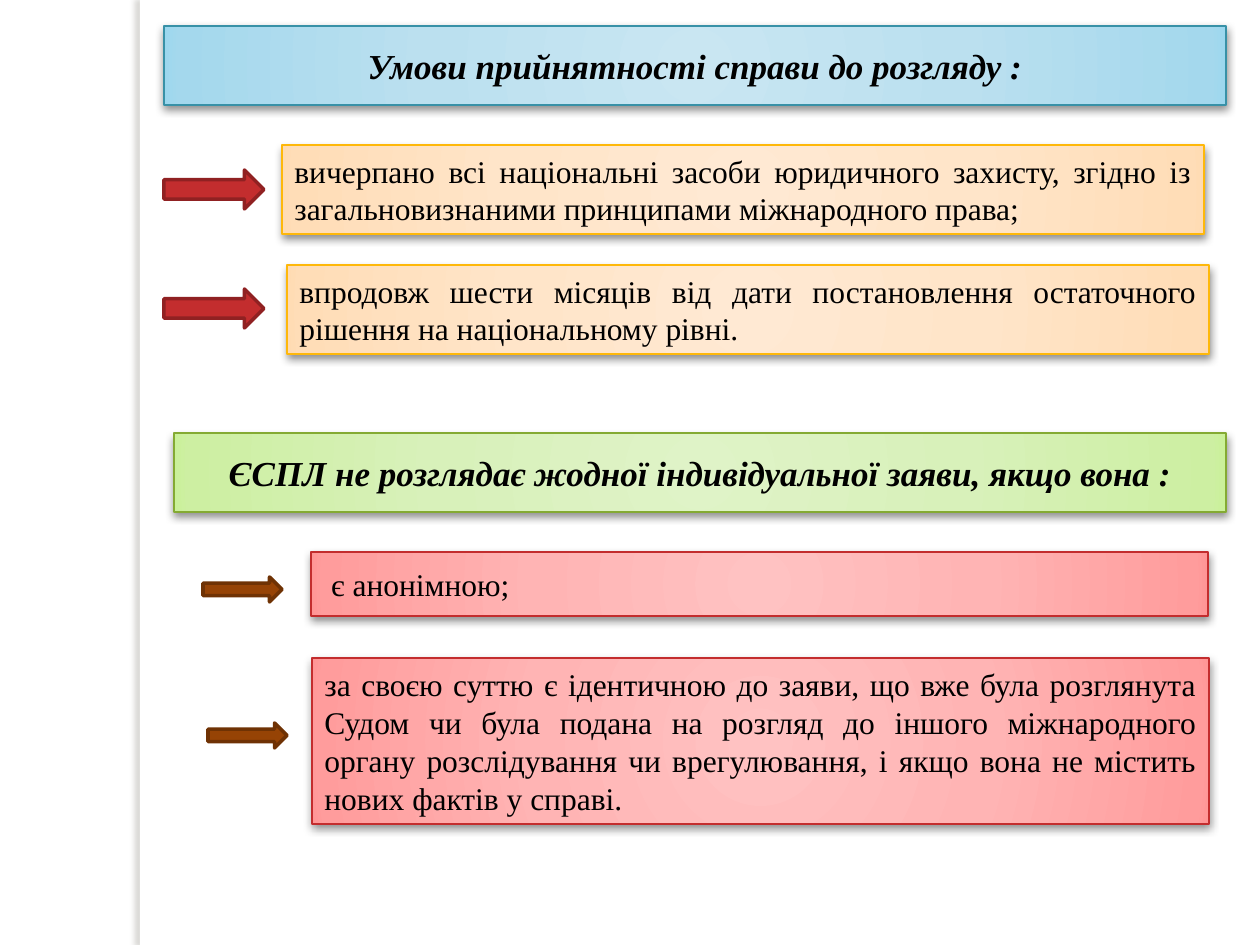
import pptx
import pptx.util
import pptx.dml.color
import pptx.enum.shapes
import pptx.enum.text
import pptx.oxml
import pptx.oxml.ns
from collections import namedtuple

RGB = pptx.dml.color.RGBColor
SHAPES = pptx.enum.shapes.MSO_SHAPE
ALIGN = pptx.enum.text.PP_ALIGN
PX = 914400 / 126
FONT = "Times New Roman"

BLACK = RGB(0, 0, 0)
WHITE = RGB(0xFF, 0xFF, 0xFF)
STRIP_SHADE = RGB(0x73, 0x6F, 0x63)

Box = namedtuple("Box", "left top width height")
Panel = namedtuple("Panel", "stops line")
ArrowStyle = namedtuple("ArrowStyle", "fill line")
Row = namedtuple("Row", "box arrow text")

STOP_POSITIONS = (0, 50, 97, 100)
BLUE = Panel((RGB(0xC9, 0xE6, 0xF2), RGB(0xBB, 0xE0, 0xEF),
              RGB(0xA4, 0xD8, 0xED), RGB(0x9B, 0xD7, 0xEE)), RGB(0x38, 0x91, 0xA7))
ORANGE = Panel((RGB(0xFF, 0xE9, 0xD3), RGB(0xFF, 0xE5, 0xC9),
                RGB(0xFF, 0xDD, 0xB7), RGB(0xFF, 0xDB, 0xB2)), RGB(0xFE, 0xB8, 0x0A))
GREEN = Panel((RGB(0xDF, 0xF3, 0xC7), RGB(0xD8, 0xF1, 0xBA),
               RGB(0xCD, 0xEF, 0xA2), RGB(0xCA, 0xF1, 0x99)), RGB(0x84, 0xAA, 0x33))
RED = Panel((RGB(0xFF, 0xC2, 0xC2), RGB(0xFF, 0xB4, 0xB4),
             RGB(0xFF, 0x9C, 0x9C), RGB(0xFF, 0x95, 0x95)), RGB(0xC3, 0x2D, 0x2E))
RED_ARROW = ArrowStyle(RGB(0xC3, 0x2D, 0x2E), RGB(0x90, 0x21, 0x22))
BROWN_ARROW = ArrowStyle(RGB(0x96, 0x43, 0x05), RGB(0x6F, 0x32, 0x04))

# Row and arrow boxes are relative to the section they belong to.
ADMISSIBLE_ROWS = (
    Row(Box(118, 119, 922, 89), Box(0, 144, 100, 39),
        "вичерпано всі національні засоби юридичного захисту, згідно із "
        "загальновизнаними принципами міжнародного права;"),
    Row(Box(123, 239, 922, 89), Box(0, 263, 100, 39),
        "впродовж шести місяців від дати постановлення остаточного рішення "
        "на національному рівні."),
)
REJECTED_ROWS = (
    Row(Box(137, 119, 897, 64), Box(29, 144, 79, 25), " є анонімною;"),
    Row(Box(138, 225, 897, 166), Box(34, 290, 79, 25),
        "за своєю суттю є ідентичною до заяви, що вже була розглянута Судом "
        "чи була подана на розгляд до іншого міжнародного органу розслідування "
        "чи врегулювання, і якщо вона не містить нових фактів у справі."),
)


def px(length):
    return pptx.util.Emu(round(length * PX))


def inside(outer, box):
    """Turn a box relative to outer into slide coordinates."""
    return box._replace(left=outer.left + box.left, top=outer.top + box.top)


def add_shape(page, kind, box):
    shape = page.shapes.add_shape(kind, *map(px, box))
    shape.shadow.inherit = False
    return shape


def add_shadow(shape, color, alpha, blur, distance, angle):
    shape.shadow.inherit = False
    effects = shape._element.spPr.find(pptx.oxml.ns.qn("a:effectLst"))
    effects.append(pptx.oxml.parse_xml(
        f'<a:outerShdw {pptx.oxml.ns.nsdecls("a")} blurRad="{pptx.util.Pt(blur)}" '
        f'dist="{pptx.util.Pt(distance)}" dir="{angle * 60000}" rotWithShape="0">'
        f'<a:srgbClr val="{color}"><a:alpha val="{alpha * 1000}"/></a:srgbClr>'
        '</a:outerShdw>'))


def fill_radial(shape, colors):
    shape.fill.gradient()
    old = shape._element.spPr.find(pptx.oxml.ns.qn("a:gradFill"))
    stops = "".join(
        f'<a:gs pos="{position * 1000}"><a:srgbClr val="{color}"/></a:gs>'
        for position, color in zip(STOP_POSITIONS, colors))
    old.getparent().replace(old, pptx.oxml.parse_xml(
        f'<a:gradFill {pptx.oxml.ns.nsdecls("a")} rotWithShape="1">'
        f'<a:gsLst>{stops}</a:gsLst><a:path path="circle">'
        '<a:fillToRect l="50000" t="50000" r="50000" b="50000"/></a:path></a:gradFill>'))


def format_panel(shape, panel, text, size, align, emphasis=False):
    fill_radial(shape, panel.stops)
    shape.line.color.rgb = panel.line
    shape.line.width = pptx.util.Pt(0.75)
    add_shadow(shape, BLACK, 43, 5, 2, 90)
    frame = shape.text_frame
    frame.word_wrap = True
    frame.auto_size = pptx.enum.text.MSO_AUTO_SIZE.NONE
    frame.vertical_anchor = pptx.enum.text.MSO_ANCHOR.MIDDLE
    para = frame.paragraphs[0]
    para.alignment = align
    span = para.add_run()
    span.text = text
    span.font.name = FONT
    span.font.size = pptx.util.Pt(size)
    span.font.bold = span.font.italic = emphasis
    span.font.color.rgb = BLACK


def add_arrow(page, box, style):
    arrow = add_shape(page, SHAPES.RIGHT_ARROW, box)
    arrow.fill.solid()
    arrow.fill.fore_color.rgb = style.fill
    arrow.line.color.rgb = style.line
    arrow.line.width = pptx.util.Pt(2)


def add_side_strip(page, box):
    strip = add_shape(page, SHAPES.RECTANGLE, box)
    strip.fill.solid()
    strip.fill.fore_color.rgb = WHITE
    strip.line.fill.background()
    add_shadow(strip, STRIP_SHADE, 25, 3, 3, 180)


def add_section(page, box, banner, heading, heading_panel, rows, row_panel, arrow_style):
    """Place a heading banner at the top of box and its arrowed rows below."""
    banner.left, banner.top, banner.width, banner.height = map(px, box._replace(height=79))
    format_panel(banner, heading_panel, heading, 20, ALIGN.CENTER, emphasis=True)
    for row in rows:
        shape = add_shape(page, SHAPES.RECTANGLE, inside(box, row.box))
        format_panel(shape, row_panel, row.text, 18, ALIGN.JUSTIFY)
        add_arrow(page, inside(box, row.arrow), arrow_style)


def main():
    deck = pptx.Presentation()
    deck.slide_width, deck.slide_height = px(1260), px(945)
    page = deck.slides.add_slide(deck.slide_layouts.get_by_name("Title Only"))
    add_side_strip(page, Box(140, 0, 10, 945))
    add_section(page, Box(164, 26, 1062, 328), page.shapes.title,
                "Умови прийнятності справи до розгляду :", BLUE,
                ADMISSIBLE_ROWS, ORANGE, RED_ARROW)
    rejected = Box(174, 433, 1052, 391)
    add_section(page, rejected, add_shape(page, SHAPES.RECTANGLE, rejected),
                "ЄСПЛ не розглядає жодної індивідуальної заяви, якщо вона :", GREEN,
                REJECTED_ROWS, RED, BROWN_ARROW)
    deck.save("out.pptx")


if __name__ == "__main__":
    main()
